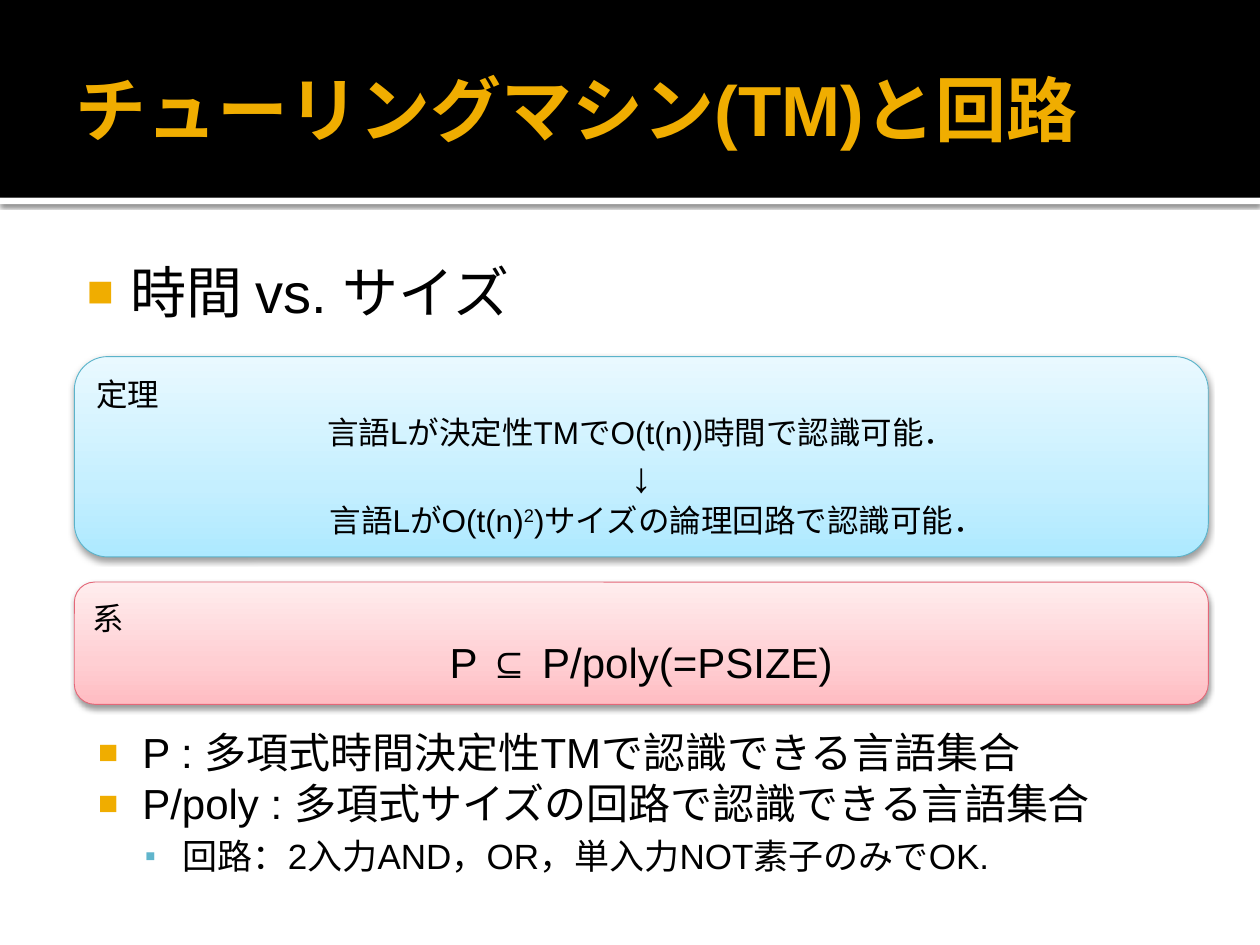
import pptx
import pptx.util
import pptx.dml.color
import pptx.enum.shapes
import pptx.enum.text
import pptx.oxml
import pptx.oxml.ns

Inches, Pt = pptx.util.Inches, pptx.util.Pt
SHAPE = pptx.enum.shapes.MSO_SHAPE
ALIGN = pptx.enum.text.PP_ALIGN
ANCHOR = pptx.enum.text.MSO_ANCHOR
NAMESPACE = pptx.oxml.ns.nsdecls("a")

GOLD, TEAL, BLACK, WHITE = "F0AD00", "60B5CC", "000000", "FFFFFF"
LEFT, WIDTH = 0.59, 9  # shared by both boxes and the lower list
BODY_INSETS = (0.06, 0.1, 0.1, 0.05)
TOP_BULLET = dict(char="■", color=GOLD, percent=80, left=0.48, hanging=0.35)
SUB_BULLET = dict(char="▪", color=TEAL, percent=90, left=0.8, hanging=0.3)


def rgb(value):
    return pptx.dml.color.RGBColor.from_string(value)


def add_xml(parent, xml):
    """Append one element, written with the a: prefix, to the parent."""
    name, rest = xml[1:].split(" ", 1)
    parent.append(pptx.oxml.parse_xml(f"<{name} {NAMESPACE} {rest}"))


def set_attributes(target, values):
    for name, value in values.items():
        setattr(target, name, value)


def set_frame(frame, insets, anchor):
    left, top, right, bottom = map(Inches, insets)
    set_attributes(frame, dict(
        word_wrap=True, auto_size=pptx.enum.text.MSO_AUTO_SIZE.NONE,
        vertical_anchor=anchor, margin_left=left, margin_top=top,
        margin_right=right, margin_bottom=bottom))


def add_run(paragraph, text, size, font="Arial", color=BLACK, bold=False, raised=False):
    run = paragraph.add_run()
    run.text = text
    set_attributes(run.font, dict(name=font, size=Pt(size), bold=bold))
    run.font.color.rgb = rgb(color)
    if raised:
        run.font._element.set("baseline", "30000")


def set_bullet(paragraph, char, color, percent, left, hanging):
    properties = paragraph._p.get_or_add_pPr()
    properties.set("marL", str(Inches(left)))
    properties.set("indent", str(-Inches(hanging)))
    add_xml(properties, f'<a:buClr ><a:srgbClr val="{color}"/></a:buClr>')
    add_xml(properties, f'<a:buSzPct val="{percent * 1000}"/>')
    add_xml(properties, '<a:buFont typeface="Arial"/>')
    add_xml(properties, f'<a:buChar char="{char}"/>')


def fill_frame(frame, lines):
    """Each line is (paragraph format, bullet or None, list of run arguments)."""
    for index, (values, bullet, runs) in enumerate(lines):
        paragraph = frame.add_paragraph() if index else frame.paragraphs[0]
        set_attributes(paragraph, dict(alignment=ALIGN.LEFT) | values)
        if bullet:
            set_bullet(paragraph, **bullet)
        for run in runs:
            add_run(paragraph, **run)


def set_shadow(shape, alpha, blur, distance):
    shape.shadow.inherit = False
    effects = shape._element.spPr.find(pptx.oxml.ns.qn("a:effectLst"))
    add_xml(effects, f'<a:outerShdw blurRad="{Pt(blur)}" dist="{Pt(distance)}" '
                     'dir="5400000" algn="ctr" rotWithShape="0">'
                     f'<a:srgbClr val="{BLACK}"><a:alpha val="{alpha * 1000}"/>'
                     '</a:srgbClr></a:outerShdw>')


def add_band(slide, top, height, color):
    band = slide.shapes.add_shape(SHAPE.RECTANGLE, 0, Inches(top), Inches(10), Inches(height))
    band.shadow.inherit = False
    band.fill.solid()
    band.fill.fore_color.rgb = rgb(color)
    band.line.fill.background()
    return band


def add_box(slide, top, height, colors, line_color, lines):
    box = slide.shapes.add_shape(SHAPE.ROUNDED_RECTANGLE, Inches(LEFT), Inches(top),
                                 Inches(WIDTH), Inches(height))
    # Three gradient stops, running from the bottom edge to the top
    stops = "".join(f'<a:gs pos="{position * 1000}"><a:srgbClr val="{color}"/></a:gs>'
                    for position, color in zip((0, 35, 100), colors))
    add_xml(box._element.spPr, f'<a:gradFill rotWithShape="1"><a:gsLst>{stops}</a:gsLst>'
                               '<a:lin ang="16200000" scaled="0"/></a:gradFill>')
    box.line.color.rgb = rgb(line_color)
    box.line.width = Pt(0.5)
    set_shadow(box, 38, 3.5, 2)
    set_frame(box.text_frame, (0.1, 0.05, 0.1, 0.05), ANCHOR.MIDDLE)
    fill_frame(box.text_frame, lines)


def add_list(slide, left, top, height, lines):
    box = slide.shapes.add_textbox(Inches(left), Inches(top), Inches(WIDTH), Inches(height))
    set_frame(box.text_frame, BODY_INSETS, ANCHOR.TOP)
    fill_frame(box.text_frame, lines)


def set_title(slide, text):
    title = slide.shapes.title
    set_attributes(title, dict(left=Inches(0.5), top=Inches(0.17),
                               width=Inches(9), height=Inches(1.37)))
    set_frame(title.text_frame, (0.1, 0.05, 0.05, 0.05), ANCHOR.MIDDLE)
    fill_frame(title.text_frame, [({}, None, [dict(text=text, size=40.5, color=GOLD, bold=True)])])
    # Bring the title in front of the bands
    title._element.getparent().append(title._element)


def main():
    presentation = pptx.Presentation()
    presentation.slide_width, presentation.slide_height = Inches(10), Inches(7.5)
    slide = presentation.slides.add_slide(presentation.slide_layouts[5])
    center = dict(alignment=ALIGN.CENTER)

    # Header
    set_shadow(add_band(slide, 1.57, 0.05, WHITE), 60, 2.5, 0.8)
    add_band(slide, 0, 1.57, BLACK)
    set_title(slide, "チューリングマシン(TM)と回路")

    # Topic
    add_list(slide, 0.5, 1.94, 0.79, [({}, TOP_BULLET, [
        dict(text="時間 ", size=32, font="Quicksand"),
        dict(text="vs. ", size=32),
        dict(text="サイズ", size=32, font="Quicksand")])])

    # Theorem
    add_box(slide, 2.83, 1.59, ("ADE9FF", "C5EFFF", "E9F9FF"), "5BB3CA", [
        (dict(alignment=ALIGN.JUSTIFY), None, [dict(text="定理", size=18, font="Quicksand")]),
        (center, None, [dict(text="言語Lが決定性TMでO(t(n))時間で認識可能．", size=18)]),
        (center, None, [dict(text="↓", size=24)]),
        (center, None, [dict(text="　言語LがO(t(n)", size=18),
                        dict(text="2", size=18, raised=True),
                        dict(text=")サイズの論理回路で認識可能．", size=18)])])

    # Definitions
    add_list(slide, LEFT, 5.67, 1.34, [
        ({}, TOP_BULLET, [dict(text="P : 多項式時間決定性TMで認識できる言語集合", size=24)]),
        ({}, TOP_BULLET, [dict(text="P/poly : 多項式サイズの回路で認識できる言語集合", size=24)]),
        (dict(level=1, space_before=Pt(4)), SUB_BULLET,
         [dict(text="回路：2入力AND，OR，単入力NOT素子のみでOK.", size=20)])])

    # Corollary
    add_box(slide, 4.62, 0.97, ("FFBCC2", "FFCFD3", "FFEDEE"), "E46778", [
        ({}, None, [dict(text="系", size=18, font="Quicksand")]),
        (center, None, [dict(text="P ⊆ P/poly(=PSIZE)", size=24)])])

    presentation.save("out.pptx")


if __name__ == "__main__":
    main()
